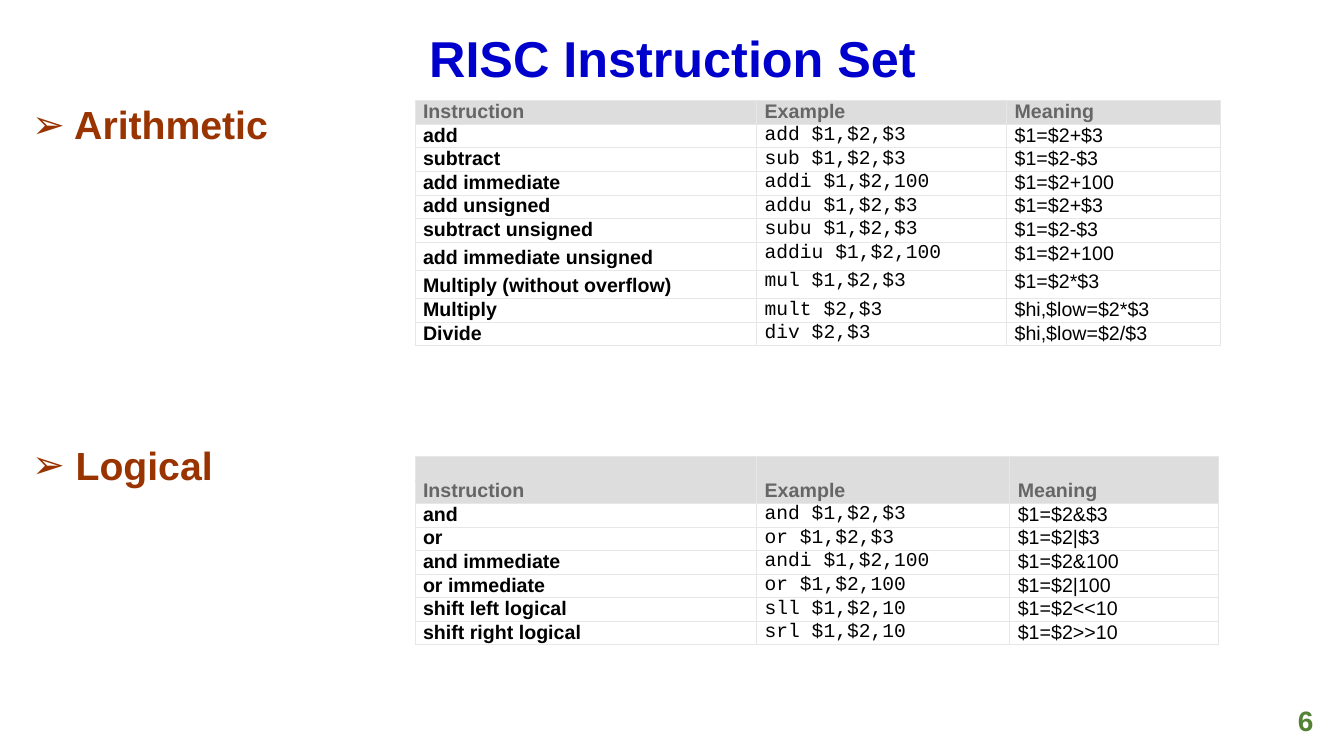
import pptx
import pptx.util
import pptx.dml.color
import pptx.enum.text
import pptx.oxml.ns
import lxml.etree

Cm = pptx.util.Cm
Pt = pptx.util.Pt
ALIGN = pptx.enum.text.PP_ALIGN
ANCHOR = pptx.enum.text.MSO_ANCHOR

COLORS = {
    "title": "0000CC", "topic": "993300", "page": "548235",
    "head": "666666", "text": "000000",
    "band": "DDDDDD", "grid": "E7E7E7",
}

HEADER = ("Instruction", "Example", "Meaning")
MATH = [
    ("add", "add $1,$2,$3", "$1=$2+$3"),
    ("subtract", "sub $1,$2,$3", "$1=$2-$3"),
    ("add immediate", "addi $1,$2,100", "$1=$2+100"),
    ("add unsigned", "addu $1,$2,$3", "$1=$2+$3"),
    ("subtract unsigned", "subu $1,$2,$3", "$1=$2-$3"),
    ("add immediate unsigned", "addiu $1,$2,100", "$1=$2+100"),
    ("Multiply (without overflow)", "mul $1,$2,$3", "$1=$2*$3"),
    ("Multiply", "mult $2,$3", "$hi,$low=$2*$3"),
    ("Divide", "div $2,$3", "$hi,$low=$2/$3"),
]
LOGIC = [
    ("and", "and $1,$2,$3", "$1=$2&$3"),
    ("or", "or $1,$2,$3", "$1=$2|$3"),
    ("and immediate", "andi $1,$2,100", "$1=$2&100"),
    ("or immediate", "or $1,$2,100", "$1=$2|100"),
    ("shift left logical", "sll $1,$2,10", "$1=$2<<10"),
    ("shift right logical", "srl $1,$2,10", "$1=$2>>10"),
]
LOOSE = ("add immediate unsigned", "Multiply (without overflow)")


def rgb(name):
    return pptx.dml.color.RGBColor.from_string(COLORS[name])


def add_tag(parent, tag, **attrs):
    return lxml.etree.SubElement(parent, pptx.oxml.ns.qn(tag), attrs)


def add_run(para, text, size, color, bold=True, face="Arial"):
    run = para.add_run()
    run.text = text
    run.font.size = Pt(size)
    run.font.name = face
    run.font.bold = bold
    run.font.color.rgb = rgb(color)


def add_box(slide, left, top, width, height, anchor):
    box = slide.shapes.add_textbox(Cm(left), Cm(top), Cm(width), Cm(height))
    frame = box.text_frame
    frame.word_wrap = True
    frame.vertical_anchor = anchor
    return frame


def add_topic(para, text, gap):
    para.line_spacing = 0.9
    para.space_before = Pt(gap)
    props = para._p.get_or_add_pPr()
    props.set("marL", str(Cm(0.63)))
    props.set("indent", str(-Cm(0.63)))
    add_tag(props, "a:buFont", typeface="Arial")
    add_tag(props, "a:buChar", char="➢")
    add_run(para, " " + text, 28, "topic")


def add_edge(cell, side, color, width):
    line = add_tag(cell._tc.get_or_add_tcPr(), "a:ln" + side, w=str(Pt(width)))
    fill = add_tag(line, "a:solidFill")
    add_tag(fill, "a:srgbClr", val=COLORS[color])


def style_cell(cell, banded, soft):
    cell.margin_left = Cm(0.2)
    cell.margin_right = cell.margin_top = cell.margin_bottom = 0
    for side in "LRTB":
        if side == soft:
            add_edge(cell, side, "band", 0.12)
        else:
            add_edge(cell, side, "grid", 0.82)
    if banded:
        cell.fill.solid()
        cell.fill.fore_color.rgb = rgb("band")
    else:
        cell.fill.background()


def add_grid(slide, top, widths, rows, blank=False):
    # A blank band above the header doubles its height
    lines = [("", "", "")] * blank + [HEADER] + rows
    tall = 0.56
    table = slide.shapes.add_table(
        len(lines), len(widths), Cm(10.46), Cm(top),
        Cm(sum(widths)), Cm(tall * len(lines))).table
    table.first_row = table.horz_banding = False
    for col, width in zip(table.columns, widths):
        col.width = Cm(width)
    for r, line in enumerate(lines):
        table.rows[r].height = Cm(tall)
        banded = r <= blank
        soft = "BT"[r] if blank and banded else ""
        for c, text in enumerate(line):
            cell = table.cell(r, c)
            style_cell(cell, banded, soft)
            para = cell.text_frame.paragraphs[0]
            if not text:
                add_tag(para._p, "a:endParaRPr", sz="1400")
            elif banded:
                add_run(para, text, 14, "head")
            else:
                face = "Courier New" if c == 1 else "Arial"
                add_run(para, text, 14, "text", c == 0, face)
            if text in LOOSE:
                para.line_spacing = 1.2


def main():
    deck = pptx.Presentation()
    deck.slide_width, deck.slide_height = Cm(33.87), Cm(19.05)
    slide = deck.slides.add_slide(deck.slide_layouts[6])

    # Title
    para = add_box(slide, 0.56, 0.56, 32.79, 1.98, ANCHOR.MIDDLE).paragraphs[0]
    para.alignment = ALIGN.CENTER
    para.line_spacing = 0.9
    add_run(para, "RISC Instruction Set", 36, "title")

    # Topics, each beside its table
    frame = add_box(slide, 0.56, 2.54, 9.6, 14.6, ANCHOR.TOP)
    add_topic(frame.paragraphs[0], "Arithmetic", 10)
    add_topic(frame.add_paragraph(), "Logical", 213)

    # Tables
    add_grid(slide, 2.54, (8.61, 6.3, 5.4), MATH)
    add_grid(slide, 11.5, (8.61, 6.38, 5.26), LOGIC, blank=True)

    # Page number
    para = add_box(slide, 25.73, 17.65, 7.62, 1.02, ANCHOR.MIDDLE).paragraphs[0]
    para.alignment = ALIGN.RIGHT
    add_run(para, "6", 20, "page")

    deck.save("out.pptx")


if __name__ == "__main__":
    main()
